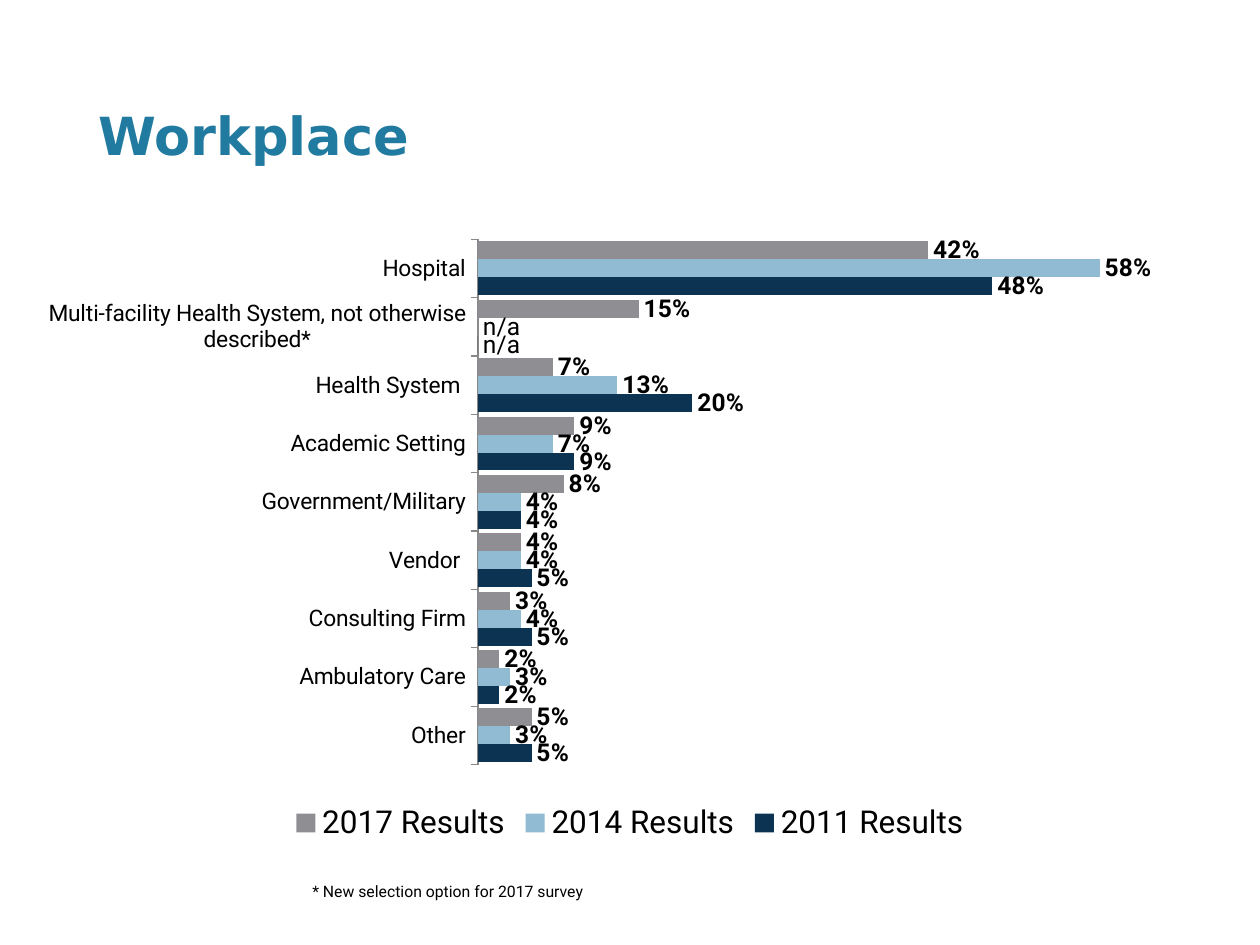
from lxml import etree
from pptx import Presentation
from pptx import util as u
from pptx.chart.data import CategoryChartData
from pptx.dml.color import RGBColor
from pptx.enum import chart as ch, text
from pptx.oxml import ns

BLACK = RGBColor(0x00, 0x00, 0x00)
TEAL = RGBColor(0x21, 0x7A, 0xA0)
AXIS_GRAY = RGBColor(0x88, 0x88, 0x88)
NAVY = RGBColor(0x0C, 0x33, 0x51)
LIGHT_BLUE = RGBColor(0x91, 0xBA, 0xD3)
GRAY = RGBColor(0x8F, 0x8F, 0x93)

TITLE_FONT = "DejaVu Sans"
BODY_FONT = "Roboto"

TITLE = "Workplace"
FOOTNOTE = "* New selection option for 2017 survey"
SERIES = [("2011 Results", NAVY), ("2014 Results", LIGHT_BLUE), ("2017 Results", GRAY)]
# Bottom to top; None means the option was not offered that year
RESULTS = [
    ("Other", (0.05, 0.03, 0.05)),
    ("Ambulatory Care", (0.02, 0.03, 0.02)),
    ("Consulting Firm", (0.05, 0.04, 0.03)),
    ("Vendor ", (0.05, 0.04, 0.04)),
    ("Government/Military", (0.04, 0.04, 0.08)),
    ("Academic Setting", (0.09, 0.07, 0.09)),
    ("Health System ", (0.2, 0.13, 0.07)),
    ("Multi-facility Health System, not otherwise described*", (None, None, 0.15)),
    ("Hospital", (0.48, 0.58, 0.42)),
]
PLOT_AREA = {"x": 0.373, "y": 0.034, "w": 0.627, "h": 0.834}


def set_font(font, size, name=BODY_FONT, color=BLACK, bold=False):
    font.size = u.Pt(size)
    font.name = name
    font.color.rgb = color
    font.bold = bold


def add_text(slide, box, content, **font_options):
    frame = slide.shapes.add_textbox(*map(u.Pt, box)).text_frame
    frame.word_wrap = True
    frame.text = content
    set_font(frame.paragraphs[0].runs[0].font, **font_options)
    return frame


def place_plot_area(chart, fractions):
    """Fix the inner plot area at fractions of the chart's size."""
    plot_area = chart.plots[0]._element.getparent()
    layout = plot_area.find(ns.qn("c:layout"))
    if layout is None:
        layout = etree.Element(ns.qn("c:layout"))
        plot_area.insert(0, layout)
    manual = etree.SubElement(layout, ns.qn("c:manualLayout"))
    settings = [("layoutTarget", "inner"), ("xMode", "edge"), ("yMode", "edge")]
    for tag, value in settings + list(fractions.items()):
        etree.SubElement(manual, ns.qn("c:" + tag)).set("val", str(value))


def format_series(series, color, values):
    series.format.fill.solid()
    series.format.fill.fore_color.rgb = color
    series.invert_if_negative = False
    labels = series.data_labels
    labels.show_value = True
    labels.number_format = "0%"
    labels.number_format_is_linked = False
    labels.position = ch.XL_LABEL_POSITION.OUTSIDE_END
    set_font(labels.font, 14, bold=True)
    for index, value in enumerate(values):
        if value is None:
            label = series.points[index].data_label
            label.text_frame.text = "n/a"
            set_font(label.text_frame.paragraphs[0].runs[0].font, 14)
            label.position = ch.XL_LABEL_POSITION.OUTSIDE_END


def add_results_chart(slide):
    columns = list(zip(*(values for _, values in RESULTS)))
    data = CategoryChartData(number_format="0%")
    data.categories = [category for category, _ in RESULTS]
    for (name, _), values in zip(SERIES, columns):
        data.add_series(name, [value or 0 for value in values])
    chart = slide.shapes.add_chart(
        ch.XL_CHART_TYPE.BAR_CLUSTERED,
        u.Pt(18), u.Pt(124.5), u.Pt(684), u.Pt(360), data).chart
    set_font(chart.font, 18)
    chart.has_title = False
    chart.has_legend = True
    chart.legend.position = ch.XL_LEGEND_POSITION.BOTTOM
    chart.legend.include_in_layout = False
    set_font(chart.legend.font, 18)

    plot = chart.plots[0]
    plot.gap_width = 25
    plot.vary_by_categories = False
    for series, (_, color), values in zip(plot.series, SERIES, columns):
        format_series(series, color, values)

    category_axis = chart.category_axis
    category_axis.major_tick_mark = ch.XL_TICK_MARK.OUTSIDE
    category_axis.format.line.color.rgb = AXIS_GRAY
    category_axis.format.line.width = u.Pt(0.75)
    set_font(category_axis.tick_labels.font, 13)
    value_axis = chart.value_axis
    value_axis.minimum_scale = 0
    value_axis.maximum_scale = 0.7
    value_axis.has_major_gridlines = False
    value_axis.visible = False
    place_plot_area(chart, PLOT_AREA)


def main():
    presentation = Presentation()
    presentation.slide_width = u.Pt(720)
    presentation.slide_height = u.Pt(540)
    slide = presentation.slides.add_slide(presentation.slide_layouts[6])

    title = add_text(slide, (56.2, 45.4, 653, 63.4), TITLE,
                     size=30, name=TITLE_FONT, color=TEAL, bold=True)
    title.margin_left = 0
    title.vertical_anchor = text.MSO_ANCHOR.MIDDLE
    add_results_chart(slide)
    add_text(slide, (171.4, 500.4, 308, 18), FOOTNOTE, size=9)

    presentation.save("out.pptx")


if __name__ == "__main__":
    main()
